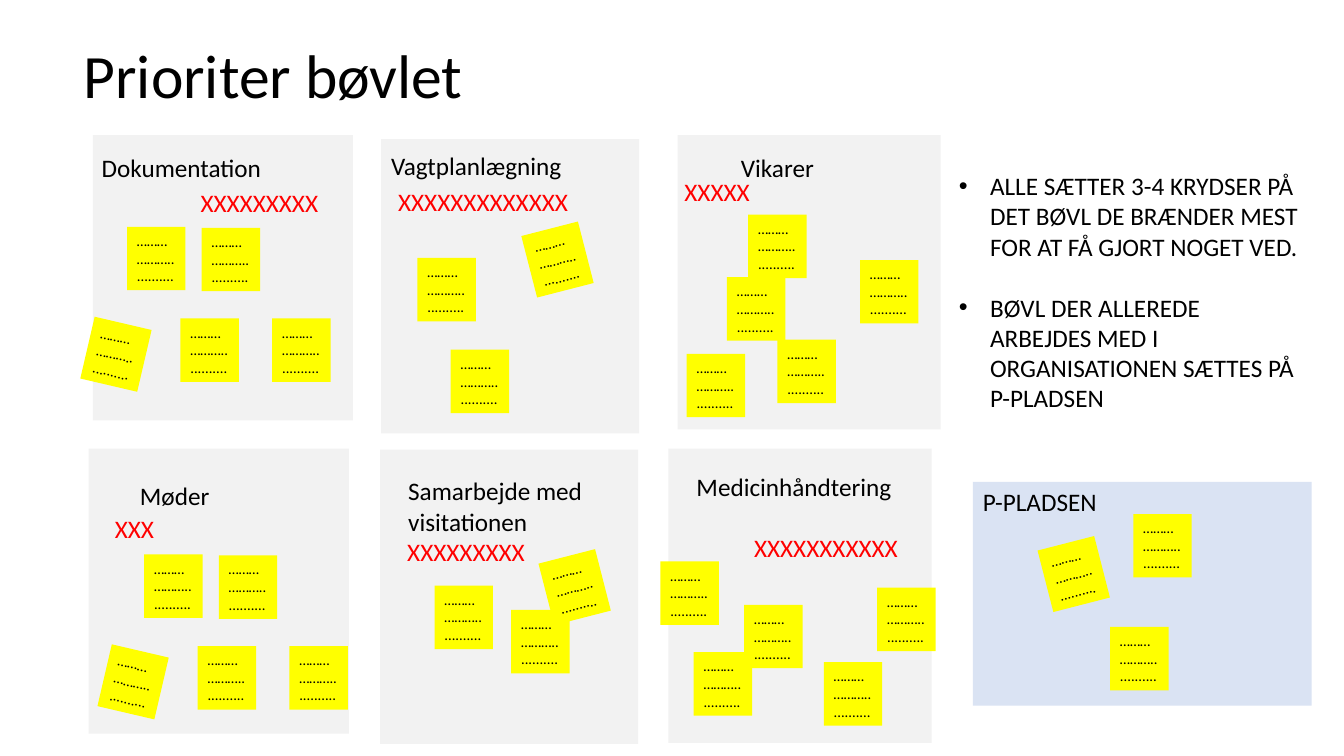
from dataclasses import dataclass

from pptx import Presentation
from pptx.dml.color import RGBColor
from pptx.enum.shapes import MSO_SHAPE
from pptx.enum.text import MSO_ANCHOR, MSO_AUTO_SIZE, PP_ALIGN
from pptx.util import Pt

RECT = MSO_SHAPE.RECTANGLE
TOP, MIDDLE = MSO_ANCHOR.TOP, MSO_ANCHOR.MIDDLE
LEFT = PP_ALIGN.LEFT
GROW, FIXED = MSO_AUTO_SIZE.SHAPE_TO_FIT_TEXT, MSO_AUTO_SIZE.NONE

PX = 9144  # 100 px to the inch
DOTS = "………………............"
NOTE_W, NOTE_H = 58, 63
LINE_H = 40
TILT_L, TILT_R = -14.4, 13.1


@dataclass(frozen=True)
class Theme:
    font: str = "Calibri"
    ink: str = "000000"
    vote: str = "FF0000"
    board: str = "F2F2F2"
    park: str = "DAE3F3"
    note: str = "FFFF00"
    head: float = 44
    text: float = 18
    small: float = 10.5


class Deck:
    def __init__(self, theme, wide, high):
        self.theme = theme
        self.prs = Presentation()
        self.prs.slide_width, self.prs.slide_height = wide * PX, high * PX
        self.slide = self.prs.slides.add_slide(self.prs.slide_layouts[1])
        self.shapes = self.slide.shapes

    def style(self, par, size, color=None):
        par.alignment = LEFT
        par.font.name = self.theme.font
        par.font.size = Pt(size)
        par.font.color.rgb = RGBColor.from_string(color or self.theme.ink)

    def place(self, shape, box):
        shape.left, shape.top, shape.width, shape.height = (n * PX for n in box)

    def title(self, text, box):
        shape = self.shapes.title
        self.place(shape, box)
        frame = shape.text_frame
        frame.text = text
        frame.vertical_anchor = MIDDLE
        frame.auto_size = FIXED
        frame.paragraphs[0].line_spacing = 0.9
        self.style(frame.paragraphs[0], self.theme.head)

    def bullets(self, items, box, indent, gap):
        shape = self.slide.placeholders[1]
        self.place(shape, box)
        frame = shape.text_frame
        frame.text = "\n".join(items)
        frame.vertical_anchor = TOP
        frame.auto_size = FIXED
        for i, par in enumerate(frame.paragraphs):
            self.style(par, self.theme.text)
            par.space_before = Pt(gap if i else 0)
            props = par._p.get_or_add_pPr()
            props.set("marL", str(indent * PX))
            props.set("indent", str(-indent * PX))

    def panel(self, box, color, text="", size=None, turn=0):
        shape = self.shapes.add_shape(RECT, *(n * PX for n in box))
        shape.shadow.inherit = False
        shape.fill.solid()
        shape.fill.fore_color.rgb = RGBColor.from_string(color)
        shape.line.fill.background()
        shape.rotation = turn
        if text:
            frame = shape.text_frame
            frame.text = text
            frame.word_wrap = True
            frame.vertical_anchor = TOP
            self.style(frame.paragraphs[0], size)

    def notes(self, spots):
        for x, y, *turn in spots:
            self.panel((x, y, NOTE_W, NOTE_H), self.theme.note, DOTS,
                       self.theme.small, *turn)

    def label(self, text, box, color=None):
        """Add a text box that wraps only if it is taller than one line."""
        shape = self.shapes.add_textbox(*(n * PX for n in box))
        frame = shape.text_frame
        frame.text = text
        frame.word_wrap = box[3] > LINE_H
        frame.auto_size = GROW
        self.style(frame.paragraphs[0], self.theme.text, color)

    def board(self, box, name, spot, votes, mark, spots):
        self.panel(box, self.theme.board)
        self.notes(spots)
        self.label(name, spot)
        self.label("X" * votes, (*mark, LINE_H), self.theme.vote)


# box, name, name box, votes, vote position and width, notes
BOARDS = [
    ((92, 134, 258, 283), "Dokumentation", (91, 146, 180, 40), 9, (189, 181, 139),
     [(126, 225), (200, 226), (179, 316), (270, 316), (86, 320, TILT_R)]),
    ((378, 138, 256, 292), "Vagtplanlægning", (378, 144, 191, 40), 13, (385, 180, 191),
     [(414, 256), (447, 347), (524, 226, TILT_L)]),
    ((672, 134, 261, 292), "Vikarer", (725, 146, 99, 40), 5, (669, 170, 86),
     [(721, 275), (742, 213), (681, 351), (771, 337), (853, 258)]),
    ((88, 445, 258, 283), "Møder", (129, 472, 90, 40), 3, (104, 504, 60),
     [(143, 550), (217, 551), (196, 641), (287, 641), (103, 645, TILT_R)]),
    ((377, 446, 256, 292), "Samarbejde med visitationen", (395, 467, 211, 71),
     9, (394, 527, 139),
     [(431, 581), (507, 605), (541, 551, TILT_L)]),
    ((663, 445, 261, 292), "Medicinhåndtering", (681, 463, 214, 40), 11, (738, 523, 165),
     [(738, 600), (817, 657), (655, 557), (688, 647), (870, 583)]),
]
PARKED = [(1036, 538, TILT_L), (1101, 622), (1124, 510)]
STEPS = [
    "ALLE SÆTTER 3-4 KRYDSER PÅ DET BØVL DE BRÆNDER MEST FOR AT FÅ GJORT NOGET VED.",
    "BØVL DER ALLEREDE ARBEJDES MED I ORGANISATIONEN SÆTTES PÅ P-PLADSEN",
]


def main():
    theme = Theme()
    deck = Deck(theme, 1333, 750)
    deck.title("Prioriter bøvlet", (73, 5, 1150, 145))
    for board in BOARDS:
        deck.board(*board)
    deck.panel((965, 478, 336, 222), theme.park, "P-PLADSEN", theme.text)
    deck.notes(PARKED)
    deck.bullets(STEPS, (941, 164, 360, 313), indent=31, gap=22)
    deck.prs.save("out.pptx")


if __name__ == "__main__":
    main()
